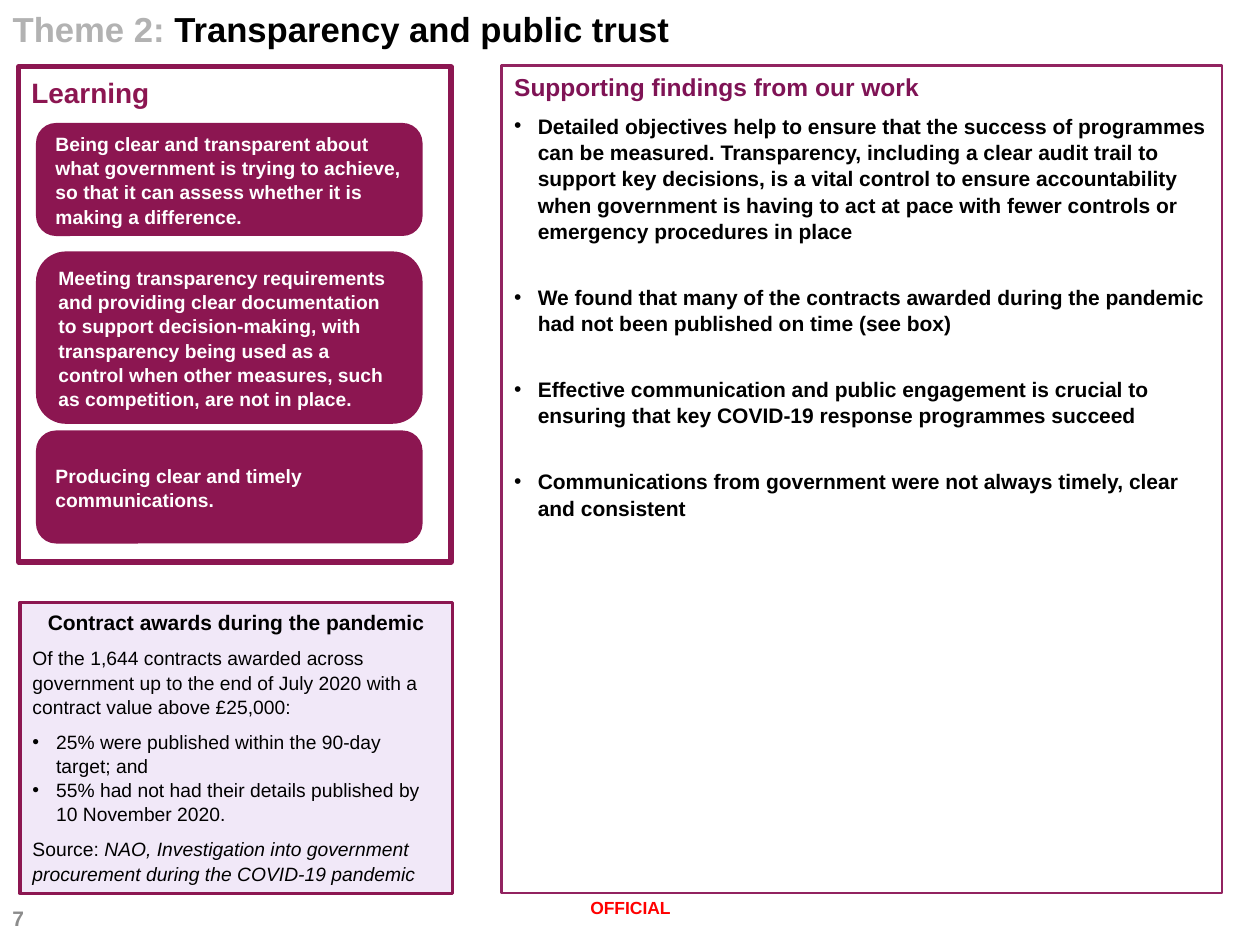
"""Build the slide on transparency and public trust."""
from lxml.etree import SubElement
from pptx import Presentation
from pptx.dml.color import RGBColor
from pptx.enum.shapes import MSO_SHAPE as Shape
from pptx.enum.text import MSO_ANCHOR as Anchor, MSO_AUTO_SIZE as AutoSize, PP_ALIGN as Align
from pptx.oxml.ns import qn
from pptx.util import Pt

BLACK = RGBColor(0x00, 0x00, 0x00)
WHITE = RGBColor(0xFF, 0xFF, 0xFF)
PLUM = RGBColor(0x8C, 0x16, 0x51)
FRAME_PLUM = RGBColor(0x92, 0x23, 0x60)
HEADING_PLUM = RGBColor(0x7F, 0x13, 0x55)
LILAC = RGBColor(0xF1, 0xE8, 0xF8)
SILVER = RGBColor(0xB2, 0xB2, 0xB2)
GREY = RGBColor(0x8C, 0x8C, 0x8C)
RED = RGBColor(0xFF, 0x00, 0x00)

LEARNING_POINTS = [
    (71.3, 62.6, "Being clear and transparent about what government is trying to achieve, "
                 "so that it can assess whether it is making a difference."),
    (144.7, 96.5, "Meeting transparency requirements and providing clear documentation to support "
                  "decision-making, with transparency being used as a control when other measures, "
                  "such as competition, are not in place."),
    (247, 62.6, "Producing clear and timely communications."),
]
FINDINGS = [
    "Detailed objectives help to ensure that the success of programmes can be measured. "
    "Transparency, including a clear audit trail to support key decisions, is a vital control "
    "to ensure accountability when government is having to act at pace with fewer controls or "
    "emergency procedures in place",
    "We found that many of the contracts awarded during the pandemic had not been published "
    "on time (see box)",
    "Effective communication and public engagement is crucial to ensuring that key COVID-19 "
    "response programmes succeed",
    "Communications from government were not always timely, clear and consistent",
]
AWARD_FACTS = [
    ("25% were published within the 90-day target; and", 0),
    ("55% had not had their details published by 10 November 2020.", 6),
]


def add_run(paragraph, text, size=11, color=BLACK, bold=False, italic=False):
    run = paragraph.add_run()
    run.text = text
    font = run.font
    font.name, font.size, font.bold, font.italic = "Arial", Pt(size), bold, italic
    font.color.rgb = color


def write(frame, text, align=Align.LEFT, after=0, bullet=False, spacing=1.05, **font):
    paragraph = frame.paragraphs[0]
    if paragraph.runs:
        paragraph = frame.add_paragraph()
    paragraph.alignment = align
    paragraph.line_spacing = spacing
    paragraph.space_before, paragraph.space_after = Pt(0), Pt(after)
    properties = paragraph._p.get_or_add_pPr()
    indent = Pt(13.5) if bullet else 0
    properties.set("marL", str(indent))
    properties.set("indent", str(-indent))
    if bullet:
        SubElement(properties, qn("a:buFont"), typeface="Arial")
        SubElement(properties, qn("a:buChar"), char="•")
    else:
        SubElement(properties, qn("a:buNone"))
    add_run(paragraph, text, **font)
    return paragraph


class ThemeSlide:
    """Hold the current slide and the shared style of its elements."""

    def __init__(self, deck):
        self.slide = deck.slides.add_slide(deck.slide_layouts[1])
        self.shapes = self.slide.shapes

    def frame_of(self, shape, anchor=Anchor.TOP):
        frame = shape.text_frame
        frame.word_wrap = True
        frame.auto_size = AutoSize.NONE
        frame.vertical_anchor = anchor
        return frame

    def placeholder(self, index, left, top, width, height):
        holder = self.slide.placeholders[index]
        holder.left, holder.top = Pt(left), Pt(top)
        holder.width, holder.height = Pt(width), Pt(height)
        return holder, self.frame_of(holder)

    def label(self, left, top, width, height, text, anchor=Anchor.TOP, **style):
        box = self.shapes.add_textbox(Pt(left), Pt(top), Pt(width), Pt(height))
        write(self.frame_of(box, anchor), text, bold=True, spacing=1, **style)

    def panel(self, left, top, width, height, kind=Shape.RECTANGLE, fill=None,
              weight=2, anchor=Anchor.TOP):
        panel = self.shapes.add_shape(kind, Pt(left), Pt(top), Pt(width), Pt(height))
        panel.shadow.inherit = False
        if fill is None:
            panel.fill.background()
        else:
            panel.fill.solid()
            panel.fill.fore_color.rgb = fill
        panel.line.color.rgb = PLUM
        panel.line.width = Pt(weight)
        return self.frame_of(panel, anchor)


def main():
    deck = Presentation()
    deck.slide_width, deck.slide_height = Pt(720), Pt(540)
    theme = ThemeSlide(deck)

    _, title = theme.placeholder(0, 0, 0.7, 720, 42.5)
    heading = write(title, "Theme 2:", size=19.8, color=SILVER, bold=True, spacing=1)
    add_run(heading, " Transparency and public trust", size=19.8, bold=True)

    theme.label(0, 510.5, 167.8, 28.8, "7", Anchor.MIDDLE, size=12, color=GREY)
    theme.label(246.2, 509, 228.2, 28.8, "OFFICIAL", align=Align.CENTER, size=10, color=RED)

    findings_box, findings = theme.placeholder(1, 286.6, 37.4, 411.8, 473)
    findings_box.line.color.rgb = FRAME_PLUM
    findings_box.line.width = Pt(1.5)
    findings.margin_left = Pt(7.2)
    findings.margin_top = findings.margin_right = findings.margin_bottom = Pt(2.9)
    write(findings, "Supporting findings from our work", after=6, size=14,
          color=HEADING_PLUM, bold=True)
    for finding in FINDINGS:
        write(findings, finding, after=22.4, bullet=True, size=12, bold=True)

    awards = theme.panel(11.5, 344.2, 247, 166.3, fill=LILAC)
    write(awards, "Contract awards during the pandemic", Align.CENTER, after=6, size=12, bold=True)
    write(awards, "Of the 1,644 contracts awarded across government up to the end of July 2020 "
                  "with a contract value above £25,000:", after=6)
    for fact, after in AWARD_FACTS:
        write(awards, fact, after=after, bullet=True)
    source = write(awards, "Source: ")
    add_run(source, "NAO, Investigation into government procurement during the COVID-19 pandemic",
            italic=True)

    for top, height, point in LEARNING_POINTS:
        learning = theme.panel(21.6, top, 218.9, height, Shape.ROUNDED_RECTANGLE, PLUM,
                               anchor=Anchor.MIDDLE)
        write(learning, point, color=WHITE, bold=True)
    theme.label(10.8, 39.6, 152.6, 26.6, "Learning", size=16, color=PLUM)
    theme.panel(10.8, 38.2, 247, 283, weight=3)

    deck.save("out.pptx")


if __name__ == "__main__":
    main()
